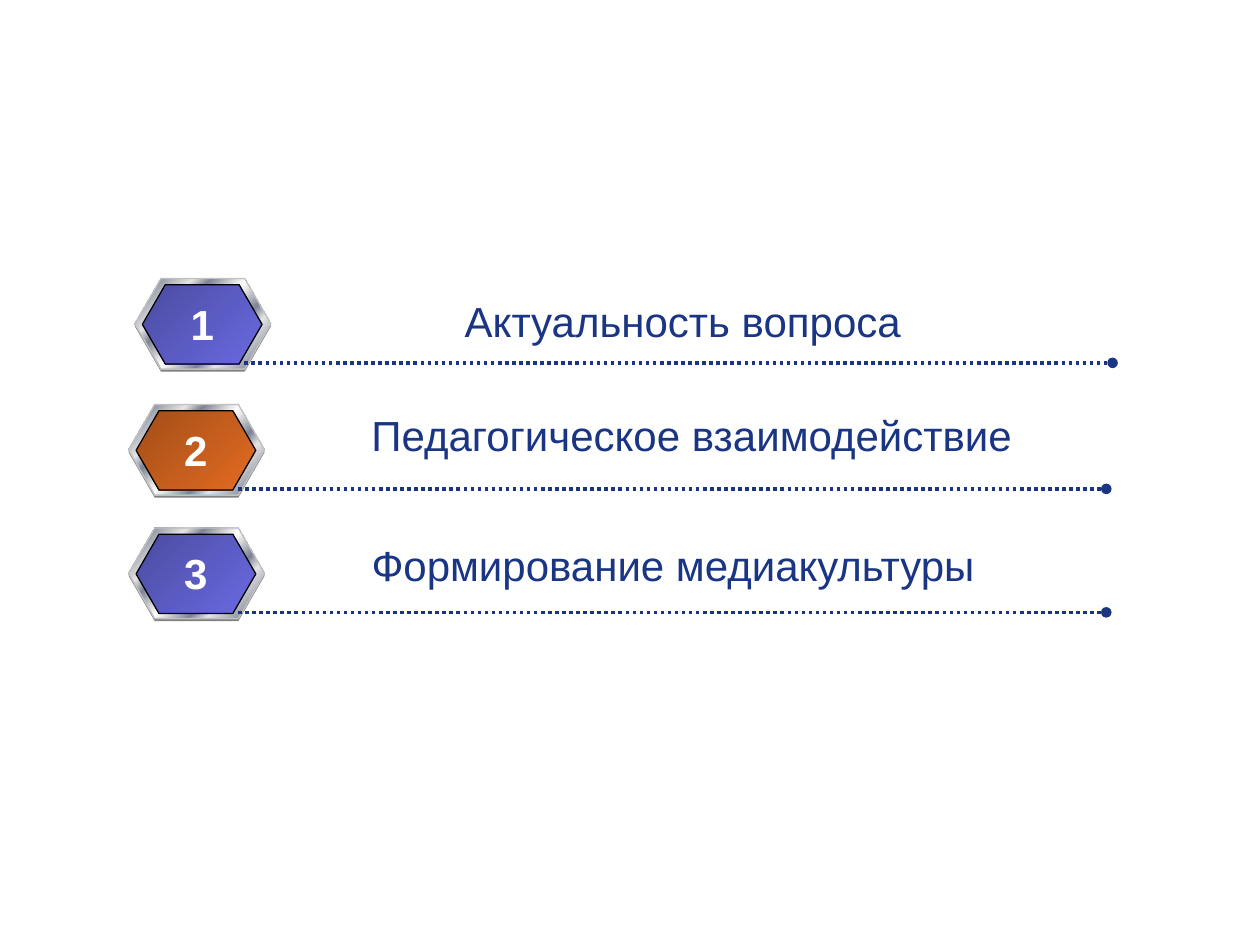
from lxml.etree import SubElement
from pptx import Presentation
from pptx.dml.color import RGBColor
from pptx.enum.dml import MSO_LINE
from pptx.enum.shapes import MSO_CONNECTOR, MSO_SHAPE
from pptx.enum.text import MSO_AUTO_SIZE, PP_ALIGN
from pptx.oxml.ns import qn
from pptx.util import Inches, Pt

COLORS = {
    "navy": "193583",
    "white": "FFFFFF",
    "black": "000000",
    "shadow": "808080",
    "rim": "C0C0C0",
    "light": "E6E6E6",
    "steel": "7D8496",
    "violet": "6A6AE2",
    "orange": "E46C22",
}

# Gradient stops: position in percent, colour name, shade in percent
METAL = [(position, name, 100) for position, name in (
    (0, "light"), (8, "steel"), (26, "light"), (34, "steel"), (46, "light"),
    (50, "white"), (54, "light"), (66, "steel"), (74, "light"),
    (92, "steel"), (100, "light"))]

# Number, face colour, left, top, label, label left, top and width
ROWS = [
    ("1", "violet", 1.07, 2.21, "Актуальность вопроса", 3.59, 2.3, 3.7),
    ("2", "orange", 1.02, 3.21, "Педагогическое взаимодействие", 2.85, 3.2, 5.34),
    ("3", "violet", 1.02, 4.19, "Формирование медиакультуры", 2.85, 4.23, 5.22),
]


def rgb(name):
    return RGBColor.from_string(COLORS[name])


def set_gradient(shape, stops):
    """Fill a shape with a diagonal gradient of any number of stops."""
    shape.fill.gradient()
    gradient = shape._element.spPr.find(qn("a:gradFill"))
    stop_list = gradient.find(qn("a:gsLst"))
    for stop in list(stop_list):
        stop_list.remove(stop)
    for position, name, shade in stops:
        stop = SubElement(stop_list, qn("a:gs"), pos=str(position * 1000))
        color = SubElement(stop, qn("a:srgbClr"), val=COLORS[name])
        if shade < 100:
            SubElement(color, qn("a:shade"), val=str(shade * 1000))
    direction = gradient.find(qn("a:lin"))
    direction.set("ang", str(45 * 60000))
    direction.set("scaled", "0")


def add_hexagon(shapes, left, top, width, height, line=None):
    shape = shapes.add_shape(MSO_SHAPE.HEXAGON, Inches(left), Inches(top),
                             Inches(width), Inches(height))
    shape.adjustments[0] = 0.289
    shape.shadow.inherit = False
    if line:
        shape.line.color.rgb = rgb(line)
        shape.line.width = Pt(0.75)
    else:
        shape.line.fill.background()
    return shape


def add_badge(shapes, left, top, color):
    """Stack a shadow, a metal rim and a coloured face."""
    shadow = add_hexagon(shapes, left, top + 0.02, 1.08, 0.72)
    shadow.fill.solid()
    shadow.fill.fore_color.rgb = rgb("shadow")
    rim = add_hexagon(shapes, left, top, 1.08, 0.72, "rim")
    set_gradient(rim, METAL)
    face = add_hexagon(shapes, left + 0.06, top + 0.05, 0.95, 0.63, "black")
    set_gradient(face, [(0, color, 46), (100, color, 100)])


def add_dotted_line(shapes, left, top, length):
    line = shapes.add_connector(MSO_CONNECTOR.STRAIGHT, Inches(left), Inches(top),
                                Inches(left + length), Inches(top))
    line.line.color.rgb = rgb("navy")
    line.line.width = Pt(2)
    line.line.dash_style = MSO_LINE.ROUND_DOT
    SubElement(line.line._get_or_add_ln(), qn("a:tailEnd"), type="oval")
    SubElement(line._element.spPr, qn("a:effectLst"))


def add_text(shapes, text, left, top, width, color, bold=False, align=PP_ALIGN.LEFT):
    box = shapes.add_textbox(Inches(left), Inches(top), Inches(width), Inches(0.5))
    frame = box.text_frame
    frame.word_wrap = False
    frame.auto_size = MSO_AUTO_SIZE.SHAPE_TO_FIT_TEXT
    paragraph = frame.paragraphs[0]
    paragraph.text = text
    paragraph.alignment = align
    paragraph.font.name = "Arial"
    paragraph.font.size = Pt(24)
    paragraph.font.bold = bold
    paragraph.font.color.rgb = rgb(color)


def add_row(slide, number, color, left, top, label, label_left, label_top, label_width):
    shapes = slide.shapes.add_group_shape().shapes
    add_badge(shapes, left, top, color)
    add_dotted_line(shapes, left + 0.87, top + 0.67, 6.89)
    add_text(shapes, label, label_left, label_top, label_width, "navy")
    add_text(shapes, number, left + 0.28, top + 0.11, 0.51, "white", True, PP_ALIGN.CENTER)


def main():
    presentation = Presentation()
    presentation.slide_width = Inches(10)
    presentation.slide_height = Inches(7.5)
    slide = presentation.slides.add_slide(presentation.slide_layouts[6])

    # Agenda rows
    for row in ROWS:
        add_row(slide, *row)

    presentation.save("out.pptx")


if __name__ == "__main__":
    main()
